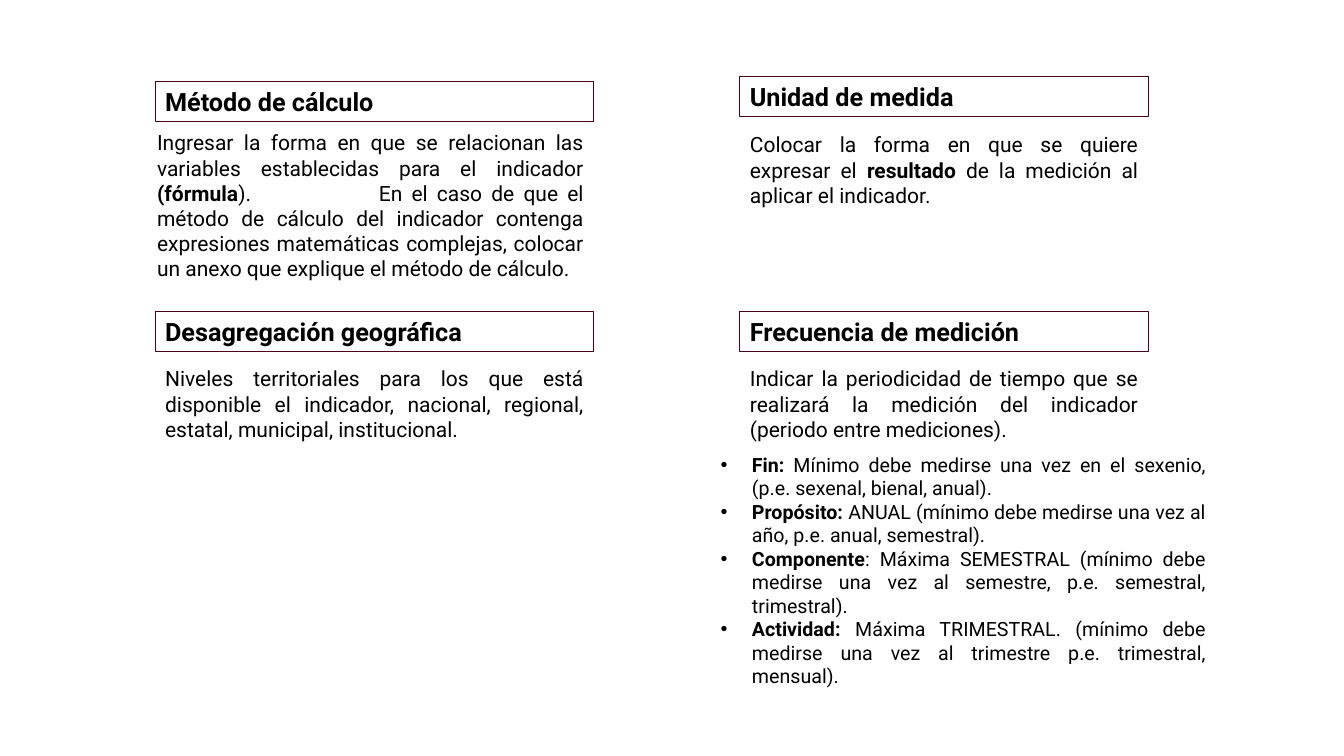
from lxml.etree import SubElement
from pptx import Presentation
from pptx.dml.color import RGBColor
from pptx.enum.shapes import MSO_SHAPE as Shape
from pptx.enum.text import MSO_ANCHOR as Anchor, MSO_AUTO_SIZE as AutoSize, PP_ALIGN as Align
from pptx.oxml.ns import qn
from pptx.util import Inches, Pt

WIDTH, HEIGHT = Inches(13.33), Inches(7.5)
BLACK = RGBColor(0x00, 0x00, 0x00)
WINE = RGBColor(0x4A, 0x00, 0x1F)
FONT = "Roboto"

# Places and sizes are percentages of the slide's width and height.
LEFT_COLUMN, LEFT_WIDTH = 11.55, 32.63
RIGHT_COLUMN, RIGHT_WIDTH = 55.06, 30.38
HEADING_HEIGHT, BODY_HEIGHT = 5.33, 11.47
LOWER_HEADING, LOWER_BODY = 41.2, 47.73

METHOD = (
    "Ingresar la forma en que se relacionan las variables establecidas para el indicador "
    "**(fórmula**).\tEn el caso de que el método de cálculo del indicador contenga "
    "expresiones matemáticas complejas, colocar un anexo que explique el método de cálculo."
)
UNIT = (
    "Colocar la forma en que se quiere expresar el **resultado** "
    "de la medición al aplicar el indicador."
)
BREAKDOWN = (
    "Niveles territoriales para los que está disponible el indicador, nacional, "
    "regional, estatal, municipal, institucional."
)
FREQUENCY = (
    "Indicar la periodicidad de tiempo que se realizará la medición del indicador "
    "(periodo entre mediciones)."
)
LEVELS = [
    "**Fin:** Mínimo debe medirse una vez en el sexenio, (p.e. sexenal, bienal, anual).",
    "**Propósito:** ANUAL (mínimo debe medirse una vez al año, p.e. anual, semestral).",
    "**Componente**: Máxima SEMESTRAL (mínimo debe medirse una vez al semestre, "
    "p.e. semestral, trimestral).",
    "**Actividad:** Máxima TRIMESTRAL. (mínimo debe medirse una vez al trimestre "
    "p.e. trimestral, mensual).",
]


def place(left, top, width, height):
    """Turn percentages of the slide into lengths."""
    return (int(WIDTH * left / 100), int(HEIGHT * top / 100),
            int(WIDTH * width / 100), int(HEIGHT * height / 100))


def add_bullet(para):
    properties = para._p.get_or_add_pPr()
    properties.set("marL", str(Inches(0.31)))
    properties.set("indent", str(-Inches(0.31)))
    color = SubElement(properties, qn("a:buClr"))
    SubElement(color, qn("a:srgbClr"), val=str(BLACK))
    SubElement(properties, qn("a:buFont"), typeface="Arial")
    SubElement(properties, qn("a:buChar"), char="•")


def add_tab_stop(para, position):
    stops = SubElement(para._p.get_or_add_pPr(), qn("a:tabLst"))
    SubElement(stops, qn("a:tab"), pos=str(Inches(position)), algn="l")


def write(box, *texts, size=15, align=Align.JUSTIFY, bullets=False, tab_stop=None):
    """Write one paragraph per text; ** switches bold on and off."""
    frame = box.text_frame
    frame.word_wrap = True
    frame.auto_size = AutoSize.SHAPE_TO_FIT_TEXT
    frame.vertical_anchor = Anchor.TOP
    for index, text in enumerate(texts):
        para = frame.add_paragraph() if index else frame.paragraphs[0]
        para.alignment = align
        if bullets:
            add_bullet(para)
        if tab_stop:
            add_tab_stop(para, tab_stop)
        for number, part in enumerate(text.split("**")):
            if part:
                span = para.add_run()
                span.text = part
                span.font.name = FONT
                span.font.size = Pt(size)
                span.font.bold = number % 2 == 1
                span.font.color.rgb = BLACK


def add_heading(page, text, left, top, width):
    box = page.shapes.add_shape(Shape.RECTANGLE, *place(left, top, width, HEADING_HEIGHT))
    box.shadow.inherit = False
    box.fill.background()
    box.line.color.rgb = WINE
    box.line.width = Pt(0.75)
    write(box, f"**{text}**", size=18, align=Align.LEFT)


def add_body(page, *texts, left, top, width, height=BODY_HEIGHT, **text_format):
    box = page.shapes.add_textbox(*place(left, top, width, height))
    write(box, *texts, **text_format)


def main():
    deck = Presentation()
    deck.slide_width, deck.slide_height = WIDTH, HEIGHT
    page = deck.slides.add_slide(deck.slide_layouts[6])

    add_heading(page, "Método de cálculo", LEFT_COLUMN, 10.8, LEFT_WIDTH)
    add_body(page, METHOD, left=10.95, top=16.53, width=33.23, height=21.6, tab_stop=2.2)

    add_heading(page, "Unidad de medida", RIGHT_COLUMN, 10.13, RIGHT_WIDTH)
    add_body(page, UNIT, left=RIGHT_COLUMN, top=16.8, width=RIGHT_WIDTH)

    add_heading(page, "Desagregación geográfica", LEFT_COLUMN, LOWER_HEADING, LEFT_WIDTH)
    add_body(page, BREAKDOWN, left=LEFT_COLUMN, top=LOWER_BODY, width=LEFT_WIDTH)

    add_heading(page, "Frecuencia de medición", RIGHT_COLUMN, LOWER_HEADING, RIGHT_WIDTH)
    add_body(page, FREQUENCY, left=RIGHT_COLUMN, top=LOWER_BODY, width=RIGHT_WIDTH)
    add_body(page, *LEVELS, left=52.89, top=59.2, width=37.58, height=26.53,
             size=14, bullets=True)

    deck.save("out.pptx")


if __name__ == "__main__":
    main()
